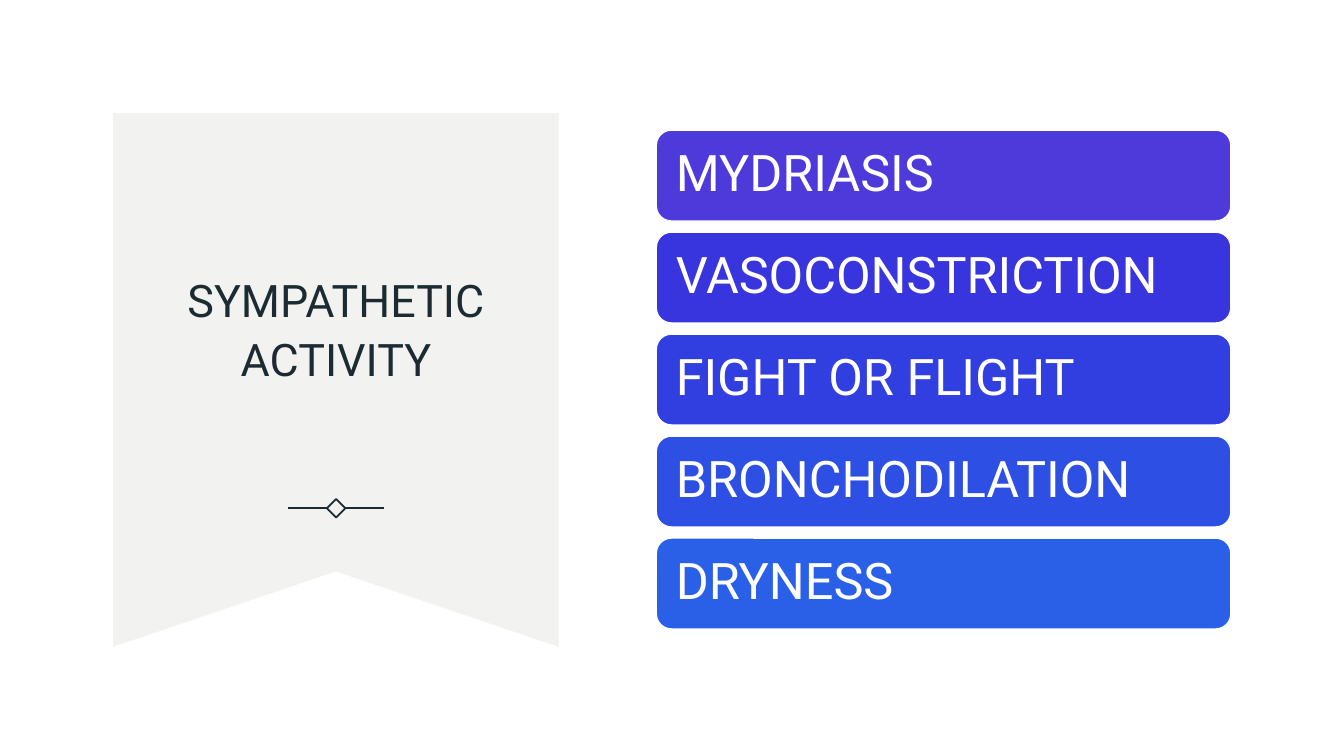
from lxml import etree
from pptx import Presentation
from pptx.dml.color import RGBColor
from pptx.enum.shapes import MSO_CONNECTOR, MSO_SHAPE
from pptx.enum.text import MSO_ANCHOR, PP_ALIGN
from pptx.oxml.ns import qn
from pptx.util import Cm, Pt

WHITE = RGBColor(0xFF, 0xFF, 0xFF)
INK = RGBColor(0x1C, 0x2B, 0x31)
PAPER = RGBColor(0xF2, 0xF3, 0xF0)
VIOLET = RGBColor(0x4E, 0x39, 0xDB)
INDIGO = RGBColor(0x39, 0x35, 0xDE)
COBALT = RGBColor(0x31, 0x3F, 0xE1)
ROYAL = RGBColor(0x2D, 0x4F, 0xE4)
AZURE = RGBColor(0x29, 0x60, 0xE7)

LEFT, CENTER = PP_ALIGN.LEFT, PP_ALIGN.CENTER
MIDDLE = MSO_ANCHOR.MIDDLE
RECTANGLE, ROUNDED = MSO_SHAPE.RECTANGLE, MSO_SHAPE.ROUNDED_RECTANGLE
STRAIGHT = MSO_CONNECTOR.STRAIGHT

EFFECTS = [
    ("MYDRIASIS", VIOLET),
    ("VASOCONSTRICTION", INDIGO),
    ("FIGHT OR FLIGHT", COBALT),
    ("BRONCHODILATION", ROYAL),
    ("DRYNESS", AZURE),
]


def write(box, text, size, color, align=LEFT, spacing=1.0, inset=0.25):
    frame = box.text_frame
    frame.word_wrap = True
    frame.vertical_anchor = MIDDLE
    frame.margin_left = frame.margin_right = Cm(inset)
    frame.margin_top = frame.margin_bottom = Cm(0.13)
    para = frame.paragraphs[0]
    para.alignment = align
    para.line_spacing = spacing
    span = para.add_run()
    span.text = text
    span.font.name = "Roboto"
    span.font.size = Pt(size)
    span.font.color.rgb = color


class Painter:
    """Draws the elements of the current slide in one shared style."""

    def __init__(self, page):
        self.shapes = page.shapes
        self.stroke = Pt(1.25)

    def ribbon(self, left, top, width, height, notch):
        right, bottom = left + width, top + height
        outline = [(right, top), (right, bottom),
                   (left + width / 2, bottom - notch), (left, bottom)]
        builder = self.shapes.build_freeform(Cm(left), Cm(top))
        builder.add_line_segments([(Cm(x), Cm(y)) for x, y in outline])
        shape = builder.convert_to_shape()
        shape.shadow.inherit = False
        shape.fill.solid()
        shape.fill.fore_color.rgb = PAPER
        shape.line.fill.background()

    def title(self, text, left, top, width, height):
        box = self.shapes.add_textbox(Cm(left), Cm(top), Cm(width), Cm(height))
        write(box, text, 32, INK, align=CENTER, spacing=1.1)

    def rule(self, start, end, y):
        line = self.shapes.add_connector(STRAIGHT, Cm(start), Cm(y), Cm(end), Cm(y))
        line.line.color.rgb = INK
        line.line.width = self.stroke
        etree.SubElement(line._element.spPr, qn("a:effectLst"))

    def ornament(self, x, y, reach, gap, side):
        diamond = self.shapes.add_shape(
            RECTANGLE, Cm(x - side / 2), Cm(y - side / 2), Cm(side), Cm(side))
        diamond.rotation = 45
        diamond.shadow.inherit = False
        diamond.fill.background()
        diamond.line.color.rgb = INK
        diamond.line.width = self.stroke
        self.rule(x - reach, x - gap, y)
        self.rule(x + gap, x + reach, y)

    def bar(self, text, color, left, top, width, height):
        shape = self.shapes.add_shape(
            ROUNDED, Cm(left), Cm(top), Cm(width), Cm(height))
        shape.shadow.inherit = False
        shape.fill.solid()
        shape.fill.fore_color.rgb = color
        shape.line.color.rgb = WHITE
        shape.line.width = Pt(1)
        write(shape, text, 36, WHITE, spacing=0.9, inset=0.38)


def main():
    deck = Presentation()
    deck.slide_width, deck.slide_height = Cm(33.87), Cm(19.05)
    painter = Painter(deck.slides.add_slide(deck.slide_layouts[6]))

    painter.ribbon(2.85, 2.85, 11.23, 13.45, notch=1.9)
    painter.title("SYMPATHETIC ACTIVITY", 3.96, 4.6, 9.02, 7.24)
    painter.ornament(8.47, 12.81, reach=1.21, gap=0.23, side=0.33)
    for row, (effect, color) in enumerate(EFFECTS):
        painter.bar(effect, color, 16.54, 3.28 + 2.57 * row, 14.48, 2.29)

    deck.save("out.pptx")


if __name__ == "__main__":
    main()
